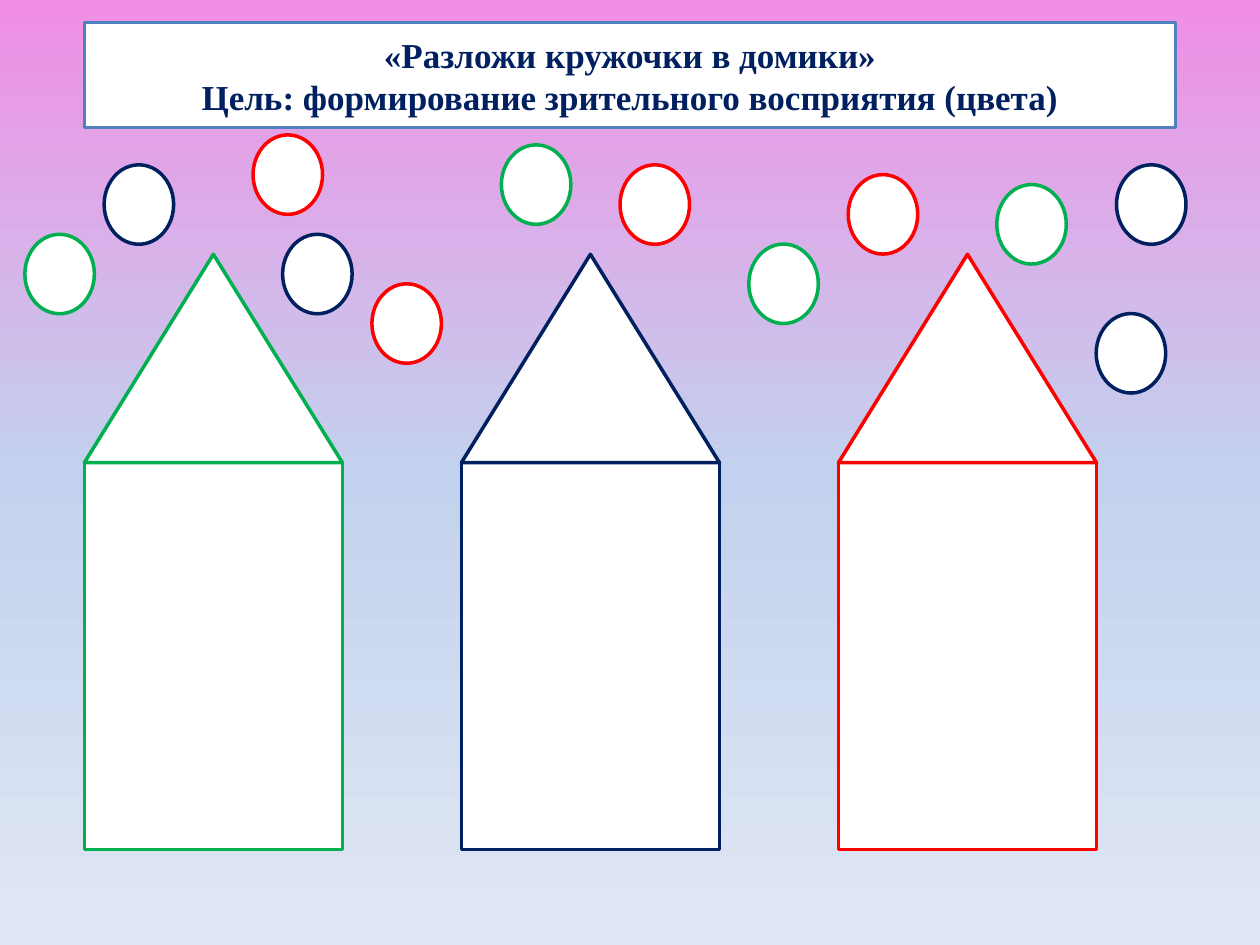
import copy

import pptx
import pptx.dml.color
import pptx.enum.shapes
import pptx.enum.text
import pptx.oxml.ns
import pptx.util

Pt = pptx.util.Pt
RGBColor = pptx.dml.color.RGBColor
SHAPES = pptx.enum.shapes.MSO_SHAPE

WHITE = RGBColor(0xFF, 0xFF, 0xFF)
GREEN = RGBColor(0x00, 0xB0, 0x50)
NAVY = RGBColor(0x00, 0x20, 0x60)
RED = RGBColor(0xFF, 0x00, 0x00)
BLUE = RGBColor(0x4F, 0x81, 0xBD)
PINK = RGBColor(0xF0, 0x8E, 0xE4)
SKY = RGBColor(0xC2, 0xD1, 0xED)
PALE = RGBColor(0xE1, 0xE8, 0xF5)

TITLE_LINES = (
    "«Разложи кружочки в домики»",
    "Цель: формирование зрительного восприятия (цвета)",
)
TITLE_FONT = {"name": "Times New Roman", "size": Pt(20), "bold": True}
HOUSE_COLORS = (GREEN, NAVY, RED)
CIRCLE_SIZE = (39.7, 45.4)
CIRCLE_SPOTS = {
    NAVY: ((59.5, 94.2), (638, 94.2), (626.4, 179.2), (161.5, 133.9)),
    GREEN: ((286.5, 82.8), (14.2, 133.9), (569.6, 105.5), (427.9, 139.5)),
    RED: ((144.6, 77.1), (484.7, 99.8), (212.5, 162.2), (354.3, 94.2)),
}


def paint(shape, color):
    """Give a shape a white fill and a coloured outline."""
    shape.fill.solid()
    shape.fill.fore_color.rgb = WHITE
    shape.line.color.rgb = color
    shape.line.width = Pt(2)


def add_outline(page, kind, box, color):
    """Add a white preset shape in the given box."""
    shape = page.shapes.add_shape(kind, *map(Pt, box))
    shape.shadow.inherit = False
    paint(shape, color)


def set_background(page):
    """Fill the page with a vertical gradient of three colours."""
    fill = page.background.fill
    fill.gradient()
    fill.gradient_angle = 270
    stop_list = page.element.find(".//" + pptx.oxml.ns.qn("a:gsLst"))
    stop_list.append(copy.deepcopy(stop_list[-1]))
    stops = zip(fill.gradient_stops, (0, 0.5, 1), (PINK, SKY, PALE))
    for stop, position, color in stops:
        stop.position = position
        stop.color.rgb = color


def add_title(page, box):
    """Place the framed title with its two lines."""
    title = page.shapes.title
    title.left, title.top, title.width, title.height = map(Pt, box)
    paint(title, BLUE)
    frame = title.text_frame
    frame.text = "\n".join(TITLE_LINES)
    frame.word_wrap = True
    frame.auto_size = pptx.enum.text.MSO_AUTO_SIZE.SHAPE_TO_FIT_TEXT
    frame.vertical_anchor = pptx.enum.text.MSO_ANCHOR.MIDDLE
    for para in frame.paragraphs:
        para.alignment = pptx.enum.text.PP_ALIGN.CENTER
        for span in para.runs:
            for name, value in TITLE_FONT.items():
                setattr(span.font, name, value)
            span.font.color.rgb = NAVY


def add_house(page, box, color):
    """Draw a house: a triangular roof over a rectangular wall."""
    left, top, width, height = box
    roof = height * 0.35
    add_outline(page, SHAPES.RECTANGLE, (left, top + roof, width, height - roof), color)
    add_outline(page, SHAPES.ISOSCELES_TRIANGLE, (left, top, width, roof), color)


def add_houses(page, box):
    """Spread one house per colour evenly across the box."""
    left, top, width, height = box
    house_width = 147.5
    pitch = (width - house_width) / (len(HOUSE_COLORS) - 1)
    for index, color in enumerate(HOUSE_COLORS):
        add_house(page, (left + index * pitch, top, house_width, height), color)


def add_circles(page, box):
    """Scatter the coloured circles relative to the box corner."""
    left, top = box[:2]
    for color, spots in CIRCLE_SPOTS.items():
        for x, y in spots:
            add_outline(page, SHAPES.OVAL, (left + x, top + y, *CIRCLE_SIZE), color)


def main():
    """Build and save the deck."""
    deck = pptx.Presentation()
    deck.slide_width, deck.slide_height = Pt(720), Pt(540)
    page = deck.slides.add_slide(deck.slide_layouts[5])
    set_background(page)
    add_houses(page, (48.2, 145.3, 578.4, 340.2))
    add_circles(page, (0, 0, 720, 540))
    add_title(page, (48.2, 15, 623.6, 55.7))
    deck.save("out.pptx")


if __name__ == "__main__":
    main()
